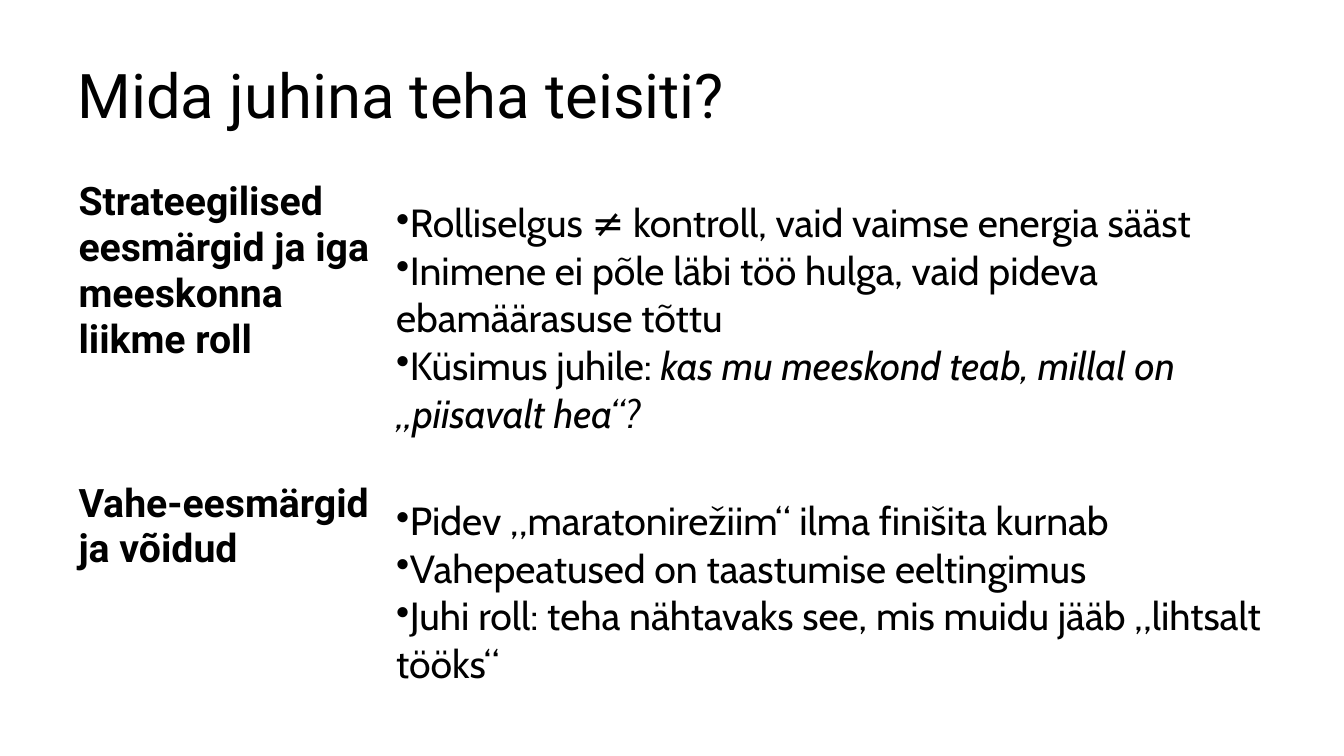
from dataclasses import dataclass

from lxml import etree
from pptx import Presentation
from pptx.dml.color import RGBColor
from pptx.enum import text
from pptx.oxml.ns import qn
from pptx.util import Pt


@dataclass(frozen=True)
class Theme:
    ink: RGBColor = RGBColor(0, 0, 0)
    paper: RGBColor = RGBColor(255, 255, 255)
    head_font: str = "Roboto"
    body_font: str = "Cabin"
    title_size: float = 44
    body_size: float = 28


THEME = Theme()
COL_WIDTHS = (226.8, 657.7)
ROW_HEIGHTS = (215.3, 176.4)
CELL_INSET = 7.92

# Each topic has a heading and bullets; a bullet is a list of (text, italic) runs.
TOPICS = [
    ("Strateegilised eesmärgid ja iga meeskonna liikme roll", [
        [("Rolliselgus ≠ kontroll, vaid vaimse energia sääst", False)],
        [("Inimene ei põle läbi töö hulga, vaid pideva ebamäärasuse tõttu", False)],
        [("Küsimus juhile: ", False),
         ("kas mu meeskond teab, millal on „piisavalt hea“?", True)],
    ]),
    ("Vahe-eesmärgid ja võidud", [
        [("Pidev „maratonirežiim“ ilma finišita kurnab", False)],
        [("Vahepeatused on taastumise eeltingimus", False)],
        [("Juhi roll: teha nähtavaks see, mis muidu jääb „lihtsalt tööks“", False)],
    ]),
]


def write(tf, paragraphs, font, size, bold=False, bullet=None, line_spacing=None):
    """Fill a text frame with paragraphs, each a list of (text, italic) runs."""
    tf.word_wrap = True
    for i, runs in enumerate(paragraphs):
        p = tf.paragraphs[0] if i == 0 else tf.add_paragraph()
        p.alignment = text.PP_ALIGN.LEFT
        if line_spacing:
            p.line_spacing = line_spacing
        if bullet:
            ppr = p._p.get_or_add_pPr()
            ppr.set("marL", "0")
            ppr.set("indent", "0")
            etree.SubElement(ppr, qn("a:buChar")).set("char", bullet)
        for words, italic in runs:
            r = p.add_run()
            r.text = words
            r.font.name = font
            r.font.size = Pt(size)
            r.font.bold = bold
            r.font.italic = italic
            r.font.color.rgb = THEME.ink


def add_title(s, words, left, top, width, height):
    title = s.shapes.title
    title.left, title.top = Pt(left), Pt(top)
    title.width, title.height = Pt(width), Pt(height)
    tf = title.text_frame
    tf.auto_size = text.MSO_AUTO_SIZE.NONE
    tf.vertical_anchor = text.MSO_ANCHOR.TOP
    write(tf, [[(words, False)]], THEME.head_font, THEME.title_size, line_spacing=0.9)


def format_cell(cell, anchor):
    cell.fill.background()
    cell.vertical_anchor = anchor
    cell.margin_left = cell.margin_right = Pt(CELL_INSET)
    cell.margin_top = cell.margin_bottom = Pt(CELL_INSET)


def add_topics(s, topics, left, top):
    """Lay out one table row per topic: bold heading, then its bullets."""
    table = s.shapes.add_table(len(topics), 2, Pt(left), Pt(top),
                               Pt(sum(COL_WIDTHS)), Pt(sum(ROW_HEIGHTS))).table
    table.first_row = table.horz_banding = False
    for column, width in zip(table.columns, COL_WIDTHS):
        column.width = Pt(width)
    for row, height, (heading, bullets) in zip(table.rows, ROW_HEIGHTS, topics):
        row.height = Pt(height)
        head, body = row.cells
        format_cell(head, text.MSO_ANCHOR.TOP)
        format_cell(body, text.MSO_ANCHOR.MIDDLE)
        write(head.text_frame, [[(heading, False)]], THEME.head_font,
              THEME.body_size, bold=True)
        write(body.text_frame, bullets, THEME.body_font, THEME.body_size, bullet="•")


def main():
    prs = Presentation()
    prs.slide_width, prs.slide_height = Pt(960), Pt(540)
    s = prs.slides.add_slide(prs.slide_layouts[5])
    s.background.fill.solid()
    s.background.fill.fore_color.rgb = THEME.paper
    add_title(s, "Mida juhina teha teisiti?", 48.2, 43.2, 861.8, 89.3)
    add_topics(s, TOPICS, 48.2, 120.2)
    prs.save("out.pptx")


if __name__ == "__main__":
    main()
